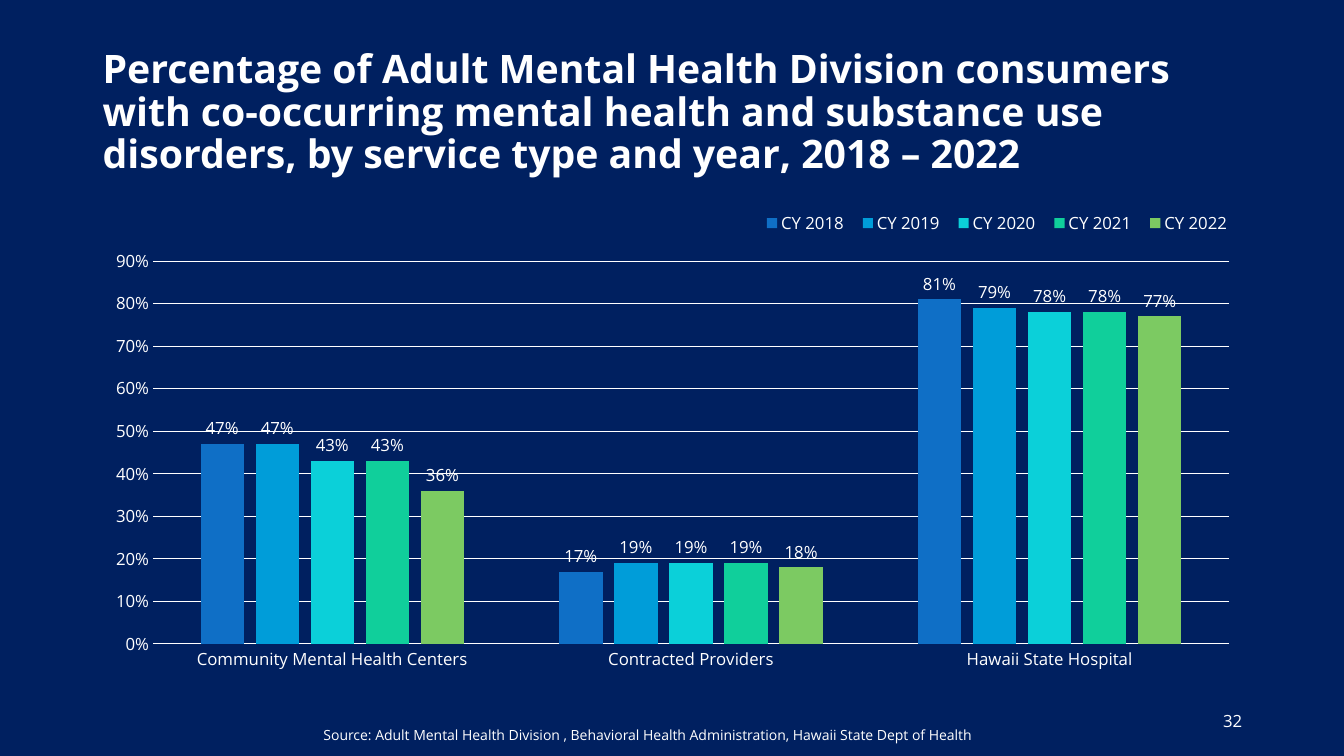
from dataclasses import dataclass

from lxml import etree
from pptx import Presentation
from pptx.chart.data import CategoryChartData
from pptx.dml.color import RGBColor
from pptx.enum.chart import XL_CHART_TYPE, XL_LABEL_POSITION, XL_LEGEND_POSITION, XL_TICK_MARK
from pptx.enum.text import MSO_ANCHOR, PP_ALIGN
from pptx.oxml import parse_xml
from pptx.util import Inches, Pt

CLUSTERED = XL_CHART_TYPE.COLUMN_CLUSTERED
OUTSIDE_END = XL_LABEL_POSITION.OUTSIDE_END
LEGEND_TOP = XL_LEGEND_POSITION.TOP
NO_TICK = XL_TICK_MARK.NONE
TOP, MIDDLE = MSO_ANCHOR.TOP, MSO_ANCHOR.MIDDLE
LEFT, RIGHT = PP_ALIGN.LEFT, PP_ALIGN.RIGHT
CHART_NS = "http://schemas.openxmlformats.org/drawingml/2006/chart"


@dataclass(frozen=True)
class Theme:
    """Colours, font and type sizes of the slide."""
    background: RGBColor = RGBColor.from_string("002060")
    ink: RGBColor = RGBColor.from_string("FFFFFF")
    years: tuple = ("0F6FC6", "009DD9", "0BD0D9", "10CF9B", "7CCA62")
    font: str = "Open Sans"
    title: int = 28
    body: int = 12
    source: int = 10
    rule: float = 0.75


THEME = Theme()
SERVICES = ("Community Mental Health Centers", "Contracted Providers", "Hawaii State Hospital")
SHARES = {
    "CY 2018": (0.47, 0.17, 0.81),
    "CY 2019": (0.47, 0.19, 0.79),
    "CY 2020": (0.43, 0.19, 0.78),
    "CY 2021": (0.43, 0.19, 0.78),
    "CY 2022": (0.36, 0.18, 0.77),
}
TITLE = ("Percentage of Adult Mental Health Division consumers with co-occurring mental health "
         "and substance use disorders, by service type and year, 2018 – 2022")
SOURCE = ("Source: Adult Mental Health Division , Behavioral Health Administration, "
          "Hawaii State Dept of Health")


def apply(target, values):
    """Set each named attribute on the target."""
    for name, value in values.items():
        setattr(target, name, value)


def style_font(font, size, bold=False):
    """Give a font the theme's face and ink."""
    apply(font, {"name": THEME.font, "size": Pt(size), "bold": bold})
    font.color.rgb = THEME.ink


def style_line(line):
    """Draw a thin rule in the theme's ink."""
    line.color.rgb = THEME.ink
    line.width = Pt(THEME.rule)


def add_text(slide, box, text, size, bold=False, align=LEFT, anchor=TOP, spacing=1.0):
    """Add a wrapped text box with one paragraph."""
    frame = slide.shapes.add_textbox(*map(Inches, box)).text_frame
    apply(frame, {"word_wrap": True, "vertical_anchor": anchor})
    paragraph = frame.paragraphs[0]
    apply(paragraph, {"alignment": align, "line_spacing": spacing})
    run = paragraph.add_run()
    run.text = text
    style_font(run.font, size, bold)


def place_part(part, index, box, inner=False):
    """Fix a chart part at fractions of the chart area."""
    for automatic in part.findall(f"{{{CHART_NS}}}layout"):
        part.remove(automatic)
    layout = parse_xml(f'<c:layout xmlns:c="{CHART_NS}"/>')
    manual = etree.SubElement(layout, f"{{{CHART_NS}}}manualLayout")
    settings = {"layoutTarget": "inner"} if inner else {}
    settings |= {"xMode": "edge", "yMode": "edge"} | dict(zip("xywh", box))
    for name, value in settings.items():
        etree.SubElement(manual, f"{{{CHART_NS}}}{name}", val=str(value))
    part.insert(index, layout)


def style_axes(chart):
    """Style the service axis and the percentage axis."""
    for axis in (chart.category_axis, chart.value_axis):
        apply(axis, {"major_tick_mark": NO_TICK, "minor_tick_mark": NO_TICK})
        style_font(axis.tick_labels.font, THEME.body)
    style_line(chart.category_axis.format.line)
    percent = chart.value_axis
    apply(percent, {"minimum_scale": 0, "maximum_scale": 0.9, "major_unit": 0.1,
                    "has_major_gridlines": True})
    apply(percent.tick_labels, {"number_format": "0%", "number_format_is_linked": False})
    percent.format.line.fill.background()
    style_line(percent.major_gridlines.format.line)


def style_series(series, color):
    """Colour one year's columns and label them."""
    series.format.fill.solid()
    series.format.fill.fore_color.rgb = RGBColor.from_string(color)
    labels = series.data_labels
    apply(labels, {"show_value": True, "position": OUTSIDE_END,
                   "number_format": "0%", "number_format_is_linked": False})
    style_font(labels.font, THEME.body)


def add_share_chart(slide, box):
    """Add the clustered columns of shares by service and year."""
    data = CategoryChartData(number_format="0%")
    data.categories = SERVICES
    for year, shares in SHARES.items():
        data.add_series(year, shares)
    chart = slide.shapes.add_chart(CLUSTERED, *map(Inches, box), data).chart
    apply(chart, {"has_title": False, "has_legend": True})
    style_font(chart.font, THEME.source)
    style_axes(chart)
    plot = chart.plots[0]
    apply(plot, {"gap_width": 219, "overlap": -27, "vary_by_categories": False})
    for series, color in zip(plot.series, THEME.years):
        style_series(series, color)
    legend = chart.legend
    apply(legend, {"position": LEGEND_TOP, "include_in_layout": False})
    style_font(legend.font, THEME.body)
    place_part(legend._element, 1, (0.57, 0.02, 0.42, 0.05))
    place_part(chart._chartSpace.chart.plotArea, 0, (0.052, 0.124, 0.928, 0.798), inner=True)


def main():
    """Build the slide and save it."""
    deck = Presentation()
    apply(deck, {"slide_width": Inches(13.33), "slide_height": Inches(7.5)})
    slide = deck.slides.add_slide(deck.slide_layouts[6])
    slide.background.fill.solid()
    slide.background.fill.fore_color.rgb = THEME.background
    add_text(slide, (0.92, 0.4, 11.5, 1.45), TITLE, THEME.title,
             bold=True, anchor=MIDDLE, spacing=0.9)
    add_text(slide, (9.42, 6.95, 3, 0.4), "32", THEME.body, align=RIGHT, anchor=MIDDLE)
    add_share_chart(slide, (0.92, 2, 11.5, 4.76))
    add_text(slide, (3.11, 7.16, 7.54, 0.27), SOURCE, THEME.source)
    deck.save("out.pptx")


if __name__ == "__main__":
    main()
